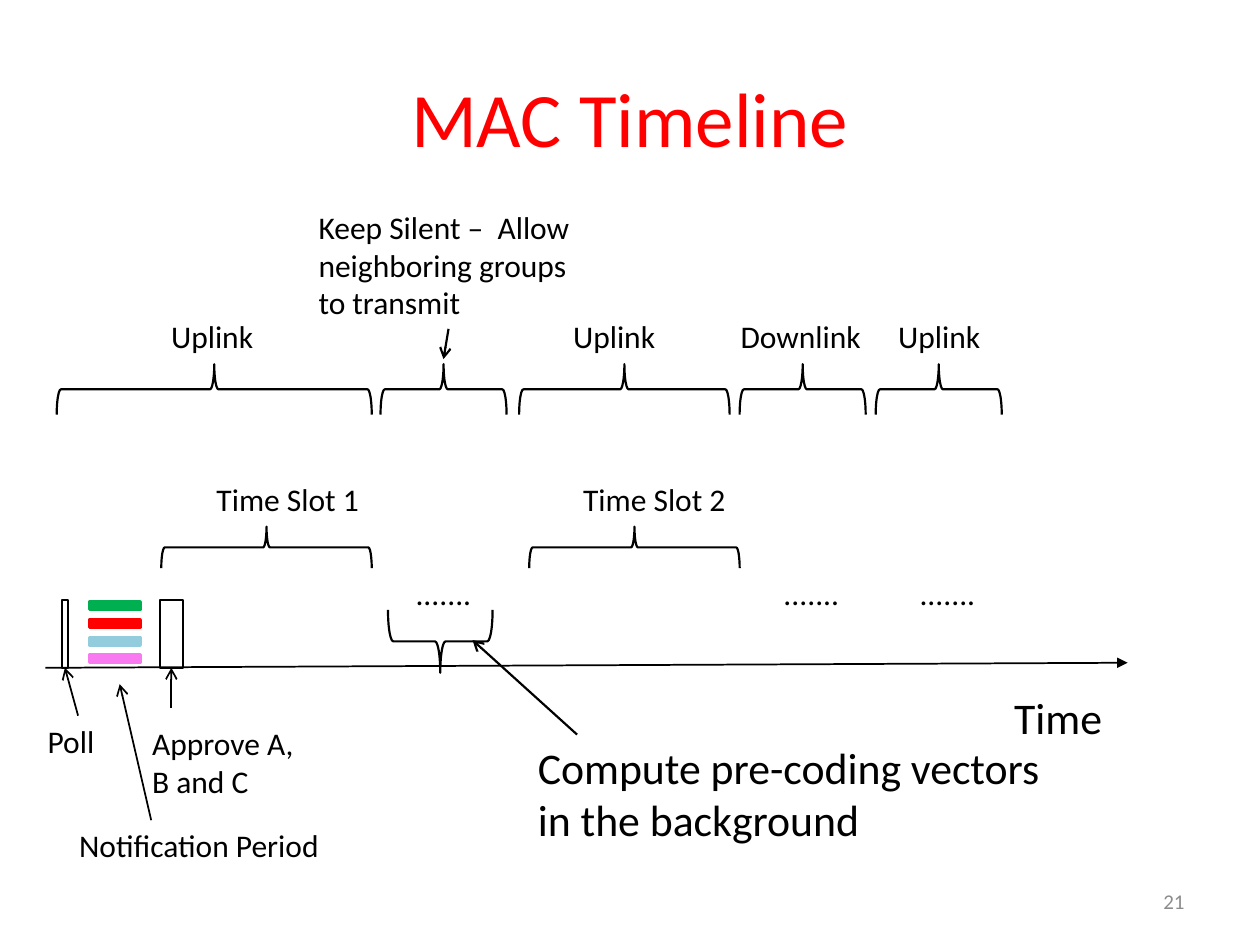
from dataclasses import dataclass
from typing import NamedTuple

from lxml import etree
from pptx import Presentation
from pptx import util as u
from pptx.dml.color import RGBColor
from pptx.enum import shapes, text
from pptx.oxml.ns import qn


@dataclass(frozen=True)
class Theme:
    font: str = "Calibri"
    ink: str = "000000"
    title: str = "FF0000"
    muted: str = "8C8C8C"
    stripes: tuple = ("00B050", "FF0000", "93CDDD", "F979F0")
    title_size: float = 44
    large: float = 25
    body: float = 18
    small: float = 12
    thin: float = 1
    medium: float = 1.25
    thick: float = 2


T = Theme()


class Label(NamedTuple):
    words: str
    x: float
    y: float
    w: float
    h: float = 0.4
    size: float = T.body
    wrap: bool = True


class Brace(NamedTuple):
    x: float  # left end of the bracketed span
    y: float
    span: float
    depth: float
    rotation: int = 90  # 90 points up, 270 points down


class Arrow(NamedTuple):
    x1: float
    y1: float
    x2: float
    y2: float
    width: float = T.thin
    head: str = "arrow"


LABELS = [
    # Link phases
    Label("Uplink", 1.26, 2.47, 0.86, wrap=False),
    Label("Keep Silent –  Allow neighboring groups to transmit", 2.43, 1.6, 2.25, 1.01),
    Label("Uplink", 4.45, 2.47, 0.91),
    Label("Downlink", 5.78, 2.47, 1.17, wrap=False),
    Label("Uplink", 7.03, 2.47, 1.25),
    # Time slots
    Label("Time Slot 1", 1.62, 3.76, 1.33),
    Label("Time Slot 2", 4.53, 3.76, 1.33),
    *(Label(".......", x, 4.51, 0.64, wrap=False) for x in (3.2, 6.12, 7.2)),
    # Notes below the axis
    Label("Poll", 0.28, 5.68, 0.67),
    Label("Approve A, B and C", 1.11, 5.7, 1.33, 0.71),
    Label("Notification Period", 0.53, 6.51, 3.25),
    Label("Time", 7.95, 5.43, 0.92, 0.52, T.large),
    Label("Compute pre-coding vectors\nin the background", 4.17, 5.83, 4.31, 0.94,
          T.large, wrap=False),
]

BRACES = [
    *(Brace(x, 2.89, span, 0.4) for x, span in
      ((0.45, 2.5), (3.02, 1), (4.12, 1.67), (5.87, 1), (6.95, 1))),
    *(Brace(x, 4.18, 1.67, 0.33) for x in (1.28, 4.2)),
    Brace(3.08, 4.84, 0.83, 0.5, rotation=270),
]

ARROWS = [
    Arrow(0.36, 5.3, 8.95, 5.26, head="triangle"),  # time axis
    Arrow(1.2, 6.51, 0.95, 5.43),
    Arrow(3.56, 2.61, 3.52, 2.85, T.medium),
    Arrow(4.58, 5.83, 3.75, 5.08, T.medium),
]


def rgb(value: str) -> RGBColor:
    return RGBColor.from_string(value)


def write(tf, words: str, *, size: float, color: str = T.ink, align=None) -> None:
    for i, line in enumerate(words.split("\n")):
        p = tf.paragraphs[0] if i == 0 else tf.add_paragraph()
        p.alignment = align
        r = p.add_run()
        r.text = line
        r.font.name = T.font
        r.font.size = u.Pt(size)
        r.font.color.rgb = rgb(color)


def add_label(s, label: Label):
    sp = s.shapes.add_textbox(*map(u.Inches, (label.x, label.y, label.w, label.h)))
    tf = sp.text_frame
    tf.word_wrap = label.wrap
    tf.auto_size = text.MSO_AUTO_SIZE.SHAPE_TO_FIT_TEXT
    write(tf, label.words, size=label.size)


def add_outline(s, kind, x: float, y: float, w: float, h: float, *,
                line: str = T.ink, width: float = T.thin, fill: str = ""):
    sp = s.shapes.add_shape(kind, *map(u.Inches, (x, y, w, h)))
    sp.shadow.inherit = False
    sp.line.color.rgb = rgb(line)
    sp.line.width = u.Pt(width)
    if fill:
        sp.fill.solid()
        sp.fill.fore_color.rgb = rgb(fill)
    else:
        sp.fill.background()
    return sp


def add_brace(s, brace: Brace) -> None:
    # The box is laid out upright, then turned about its centre
    shift = (brace.span - brace.depth) / 2
    sp = add_outline(s, shapes.MSO_SHAPE.LEFT_BRACE, brace.x + shift, brace.y - shift,
                     brace.depth, brace.span, width=T.medium)
    sp.rotation = brace.rotation


def add_arrow(s, arrow: Arrow, target=None) -> None:
    ends = map(u.Inches, (arrow.x1, arrow.y1, arrow.x2, arrow.y2))
    cx = s.shapes.add_connector(shapes.MSO_CONNECTOR.STRAIGHT, *ends)
    if target is not None:
        cx.end_connect(target, 2)
    cx.line.color.rgb = rgb(T.ink)
    cx.line.width = u.Pt(arrow.width)
    etree.SubElement(cx.line._get_or_add_ln(), qn("a:tailEnd"), type=arrow.head)
    etree.SubElement(cx._element.spPr, qn("a:effectLst"))


def main() -> None:
    prs = Presentation()
    prs.slide_width, prs.slide_height = u.Inches(10), u.Inches(7.5)
    s = prs.slides.add_slide(prs.slide_layouts[5])

    # Title
    title = s.shapes.title
    title.left, title.top, title.width, title.height = map(u.Inches, (0.5, 0.3, 9, 1.25))
    title.text_frame.vertical_anchor = text.MSO_ANCHOR.MIDDLE
    write(title.text_frame, "MAC Timeline", size=T.title_size, color=T.title,
          align=text.PP_ALIGN.CENTER)

    # Poll and approval frames, each with its arrow
    rect = shapes.MSO_SHAPE.RECTANGLE
    poll = add_outline(s, rect, 0.49, 4.76, 0.05, 0.54)
    approve = add_outline(s, rect, 1.27, 4.76, 0.18, 0.54)
    add_arrow(s, Arrow(0.62, 5.68, 0.52, 5.3), poll)
    add_arrow(s, Arrow(1.36, 5.62, 1.36, 5.3), approve)

    # Notification stripes
    for i, color in enumerate(T.stripes):
        add_outline(s, rect, 0.71, 4.78 + 0.14 * i, 0.4, 0.06,
                    line=color, width=T.thick, fill=color)

    # Timeline
    for arrow in ARROWS:
        add_arrow(s, arrow)
    for brace in BRACES:
        add_brace(s, brace)
    for label in LABELS:
        add_label(s, label)

    # Slide number
    number = s.shapes.add_textbox(*map(u.Inches, (7.17, 6.95, 2.33, 0.4)))
    number.text_frame.word_wrap = True
    number.text_frame.vertical_anchor = text.MSO_ANCHOR.MIDDLE
    write(number.text_frame, "21", size=T.small, color=T.muted,
          align=text.PP_ALIGN.RIGHT)

    prs.save("out.pptx")


if __name__ == "__main__":
    main()
